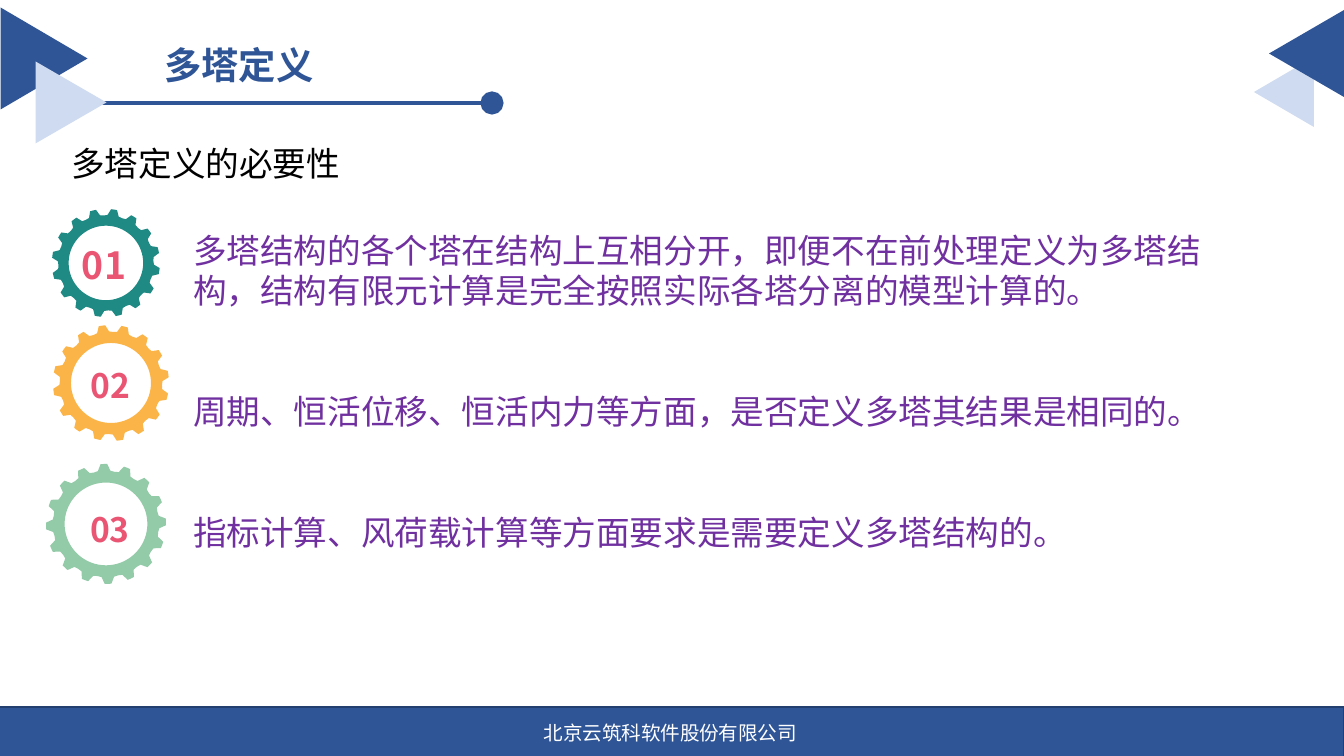
"""Build the slide on why a multi-tower definition is needed."""
import math
from dataclasses import dataclass

from lxml import etree
from pptx import Presentation
from pptx import util as u
from pptx.dml.color import RGBColor
from pptx.enum import shapes, text
from pptx.oxml import ns

SLIDE_SIZE = (1344, 756)
PX = u.Inches(10) / SLIDE_SIZE[0]


@dataclass(frozen=True)
class Theme:
    """Colours, fonts and type sizes of the slide."""

    navy: str = "2F5597"
    edge: str = "233F70"
    pale: str = "CFDBF0"
    white: str = "FFFFFF"
    black: str = "000000"
    purple: str = "7030A0"
    pink: str = "E95573"
    latin: str = "Arial"
    heading: str = "Noto Sans CJK JP"
    number: str = "Noto Sans CJK SC"
    footer_size: float = 10.5
    body_size: float = 18
    title_size: float = 20


THEME = Theme()
TRIANGLES = [
    ((1249, 62, 70, 60), 270, THEME.pale),
    ((1263, 16, 87, 75), 270, THEME.navy),
    ((-7, 15, 102, 87), 90, THEME.navy),
    ((30, 67, 82, 71), 90, THEME.pale),
]
RULE = (101, 103, 492, 103)
FOOTER = ("北京云筑科软件股份有限公司", (-3, 707, 1347, 51))
TITLE = ("多塔定义", (151, 28, 265, 66))
HEADING = ("多塔定义的必要性", (58, 136, 673, 54))
REASONS = [
    "多塔结构的各个塔在结构上互相分开，即便不在前处理定义为多塔结构，结构有限元计算是完全按照实际各塔分离的模型计算的。",
    "周期、恒活位移、恒活内力等方面，是否定义多塔其结果是相同的。",
    "指标计算、风荷载计算等方面要求是需要定义多塔结构的。",
]
REASONS_BOX = (180, 223, 1039, 340)
REASON_GAP = 43.2
GEARS = [
    ("01", (106, 263), 54, 8.7, "1F8984", (73, 237, 67, 55), THEME.title_size),
    ("02", (111, 383), 58, 13.6, "FBB448", (82, 360, 62, 51), THEME.body_size),
    ("03", (106, 524), 60, 20.5, "93CAA8", (81, 504, 66, 42), THEME.body_size),
]
TEETH = 16
TOOTH_PROFILE = [(-3.2, 1), (0, 1), (3.2, 1), (6.7, 0.89), (11.25, 0.88), (15.8, 0.89)]
HOLE_RATIO = 0.69
HOLE_POINTS = 72


def emu(lengths):
    return [round(length * PX) for length in lengths]


def paint(shape, fill, line=None):
    shape.shadow.inherit = False
    shape.fill.solid()
    shape.fill.fore_color.rgb = RGBColor.from_string(fill)
    if line:
        shape.line.color.rgb = RGBColor.from_string(line)
        shape.line.width = u.Pt(1)
    else:
        shape.line.fill.background()


def write(shape, lines, size, color, font, bold=False, gap=0, align=None, **frame_format):
    frame = shape.text_frame
    for name, value in {"word_wrap": True, **frame_format}.items():
        setattr(frame, name, value)
    for index, line in enumerate(lines):
        paragraph = frame.paragraphs[0] if index == 0 else frame.add_paragraph()
        paragraph.alignment = align
        if index and gap:
            paragraph.space_before = u.Pt(gap)
        run = paragraph.add_run()
        run.text = line
        for name, value in {"name": font, "size": u.Pt(size), "bold": bold}.items():
            setattr(run.font, name, value)
        run.font.color.rgb = RGBColor.from_string(color)
        etree.SubElement(run.font._element, ns.qn("a:ea"), typeface=font)


def add_text(slide, box, lines, *style, **options):
    write(slide.shapes.add_textbox(*emu(box)), lines, *style, **options)


def add_triangle(slide, box, rotation, color):
    triangle = slide.shapes.add_shape(shapes.MSO_SHAPE.ISOSCELES_TRIANGLE, *emu(box))
    triangle.rotation = rotation
    paint(triangle, color)


def add_rule(slide):
    rule = slide.shapes.add_connector(shapes.MSO_CONNECTOR.STRAIGHT, *emu(RULE))
    rule.line.color.rgb = RGBColor.from_string(THEME.navy)
    rule.line.width = u.Pt(2.5)
    etree.SubElement(rule.line._get_or_add_ln(), ns.qn("a:tailEnd"), type="oval", w="lg", len="lg")
    etree.SubElement(rule._element.spPr, ns.qn("a:effectLst"))


def polar(center, radius, degrees):
    angle = math.radians(degrees)
    return emu((center[0] + radius * math.cos(angle), center[1] + radius * math.sin(angle)))


def add_gear(slide, center, radius, phase, color):
    pitch = 360 / TEETH
    rim = [
        polar(center, radius * ratio, phase + tooth * pitch + offset)
        for tooth in range(TEETH)
        for offset, ratio in TOOTH_PROFILE
    ]
    hole = [
        polar(center, radius * HOLE_RATIO, -360 * step / HOLE_POINTS)
        for step in range(HOLE_POINTS)
    ]
    builder = slide.shapes.build_freeform(*rim[0])
    builder.add_line_segments(rim[1:])
    builder.move_to(*hole[0])
    builder.add_line_segments(hole[1:])
    paint(builder.convert_to_shape(), color)


def main():
    presentation = Presentation()
    presentation.slide_width, presentation.slide_height = emu(SLIDE_SIZE)
    slide = presentation.slides.add_slide(presentation.slide_layouts[6])

    for triangle in TRIANGLES[:2]:
        add_triangle(slide, *triangle)
    label, box = FOOTER
    footer = slide.shapes.add_shape(shapes.MSO_SHAPE.RECTANGLE, *emu(box))
    paint(footer, THEME.navy, THEME.edge)
    write(footer, [label], THEME.footer_size, THEME.white, THEME.latin,
          align=text.PP_ALIGN.CENTER, vertical_anchor=text.MSO_ANCHOR.MIDDLE)
    add_triangle(slide, *TRIANGLES[2])
    add_rule(slide)
    add_triangle(slide, *TRIANGLES[3])

    label, box = TITLE
    add_text(slide, box, [label], THEME.title_size, THEME.navy, THEME.latin,
             bold=True, vertical_anchor=text.MSO_ANCHOR.BOTTOM)
    label, box = HEADING
    add_text(slide, box, [label], THEME.body_size, THEME.black, THEME.heading)
    add_text(slide, REASONS_BOX, REASONS, THEME.body_size, THEME.purple, THEME.latin,
             gap=REASON_GAP)

    side, end = emu((9, 5))
    for number, center, radius, phase, color, box, size in GEARS:
        add_gear(slide, center, radius, phase, color)
        add_text(slide, box, [number], size, THEME.pink, THEME.number, bold=True,
                 margin_left=side, margin_right=side, margin_top=end, margin_bottom=end)

    presentation.save("out.pptx")


if __name__ == "__main__":
    main()
